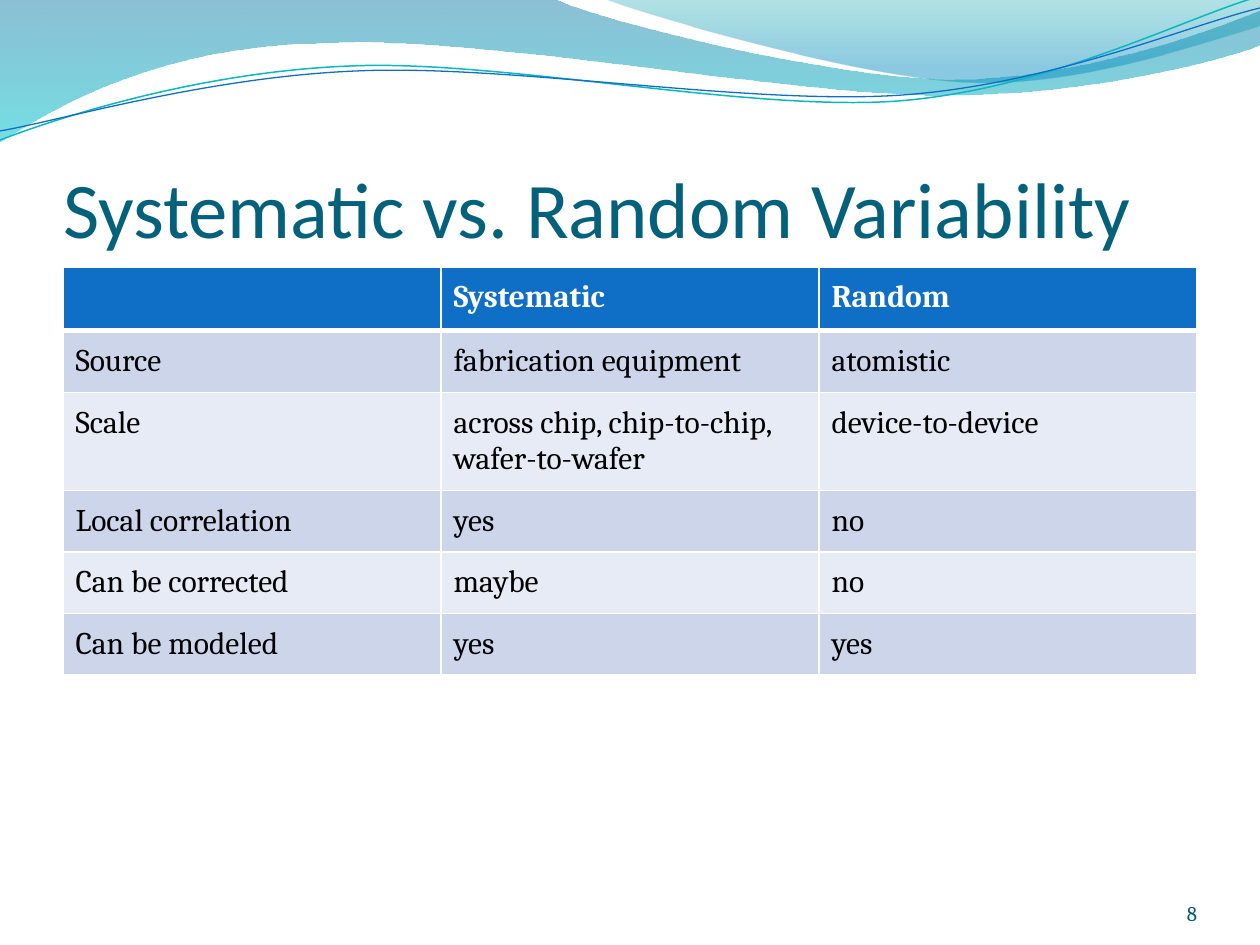
"""Build the slide comparing systematic and random variability."""
import pptx
import pptx.util
import pptx.dml.color
import pptx.enum.text
import pptx.oxml
import pptx.oxml.ns

RGB = pptx.dml.color.RGBColor
WHITE = RGB(0xFF, 0xFF, 0xFF)
BLACK = RGB(0, 0, 0)
BLUE = RGB(0x0F, 0x6F, 0xC6)
TEAL = RGB(0x0A, 0xB8, 0xBF)
NAVY = RGB(0x04, 0x61, 0x7B)
SLATE = RGB(0x04, 0x5D, 0x75)
BANDS = [RGB(0xE7, 0xEB, 0xF5), RGB(0xCC, 0xD5, 0xEA)]
PX = 9144000 / 1260
HEAD, BODY = "Calibri", "Cambria"
SPACE = pptx.oxml.ns.nsdecls("a")

TITLE = "Systematic vs. Random Variability"
NUMBER = "8"
ROWS = [
    ("", "Systematic", "Random"),
    ("Source", "fabrication equipment", "atomistic"),
    ("Scale", "across chip, chip-to-chip, wafer-to-wafer", "device-to-device"),
    ("Local correlation", "yes", "no"),
    ("Can be corrected", "maybe", "no"),
    ("Can be modeled", "yes", "yes"),
]
WAVES = [
    ([(0, 0), (554, -1), (600, 21, 837, 79, 955, 79),
      (1074, 79, 1207, 33, 1260, 11), (1261, 45),
      (1239, 55, 1096, 96, 940, 95), (784, 95, 481, 35, 324, 43),
      (163, 45, 58, 105, -1, 142)],
     [(0, RGB(0x00, 0x74, 0xA1), 45), (1, RGB(0x00, 0xC6, 0xCF), 55)]),
    ([(604, -1), (641, 14, 859, 78, 969, 82),
      (1079, 87, 1211, 40, 1260, 26), (1260, 0)],
     [(0, RGB(0x00, 0xA1, 0xA9), 30), (0.8, RGB(0x00, 0x8B, 0xBF), 45)]),
]
LINES = [
    ([(0, 140), (60, 117, 199, 72, 349, 66), (498, 59, 747, 112, 898, 101),
      (1049, 89, 1182, 19, 1257, -3)], TEAL, 0.85),
    ([(0, 131), (59, 121, 207, 77, 357, 71), (508, 64, 752, 106, 903, 95),
      (1053, 84, 1186, 26, 1260, 8)], BLUE, 0.75),
]


def px(*nums):
    return [pptx.util.Emu(round(num * PX)) for num in nums]


def add_path(slide, path, close):
    """Draw corners as lines and six-number parts as cubic curves."""
    parts = [px(*part) for part in path]
    maker = slide.shapes.build_freeform(*parts[0])
    maker.add_line_segments([part[-2:] for part in parts[1:]], close=close)
    shape = maker.convert_to_shape()
    shape.shadow.inherit = False
    nodes = list(next(shape.element.spPr.iter(pptx.oxml.ns.qn("a:path"))))
    for node, part in zip(nodes[1:], parts[1:]):
        if len(part) == 6:
            node.tag = pptx.oxml.ns.qn("a:cubicBezTo")
            for spot in (0, 1):
                x, y = part[2 * spot:2 * spot + 2]
                node.insert(spot, pptx.oxml.parse_xml(
                    f'<a:pt {SPACE} x="{x - shape.left}" y="{y - shape.top}"/>'))
    return shape


def add_wave(slide, path, stops):
    shape = add_path(slide, path, True)
    shape.line.fill.background()
    shape.fill.gradient()
    shape.fill.gradient_angle = 270
    for stop, (place, color, alpha) in zip(shape.fill.gradient_stops, stops):
        stop.position = place
        stop.color.rgb = color
    tags = shape.element.spPr.iter(pptx.oxml.ns.qn("a:srgbClr"))
    for tag, (_, _, alpha) in zip(tags, stops):
        tag.append(pptx.oxml.parse_xml(f'<a:alpha {SPACE} val="{alpha * 1000}"/>'))


def add_line(slide, path, color, width):
    shape = add_path(slide, path, False)
    shape.fill.background()
    shape.line.color.rgb = color
    shape.line.width = pptx.util.Pt(width)


def write(frame, text, font, size, color, bold=False, align="LEFT"):
    para = frame.paragraphs[0]
    para.alignment = getattr(pptx.enum.text.PP_ALIGN, align)
    run = para.add_run()
    run.text = text
    run.font.name = font
    run.font.size = pptx.util.Pt(size)
    run.font.bold = bold
    run.font.color.rgb = color


def set_box(shape, box, top=0):
    shape.left, shape.top, shape.width, shape.height = px(*box)
    frame = shape.text_frame
    frame.word_wrap = True
    frame.auto_size = pptx.enum.text.MSO_AUTO_SIZE.NONE
    frame.vertical_anchor = pptx.enum.text.MSO_ANCHOR.BOTTOM
    frame.margin_left = frame.margin_right = frame.margin_bottom = 0
    frame.margin_top = px(top)[0]
    return frame


def add_edges(cell, row):
    for spot, side in enumerate("LRTB"):
        width = pptx.util.Pt(3 if row == 0 and side == "B" else 1)
        cell._tc.get_or_add_tcPr().insert(spot, pptx.oxml.parse_xml(
            f'<a:ln{side} {SPACE} w="{width}"><a:solidFill>'
            f'<a:srgbClr val="{WHITE}"/></a:solidFill></a:ln{side}>'))


def add_grid(slide):
    size = len(ROWS), len(ROWS[0])
    table = slide.shapes.add_table(*size, *px(63, 267, 1134, 52 * size[0])).table
    table.horz_banding = False
    for r, row in enumerate(ROWS):
        for c, text in enumerate(row):
            cell = table.cell(r, c)
            cell.margin_left = cell.margin_right = pptx.util.Inches(0.1)
            cell.margin_top = cell.margin_bottom = pptx.util.Inches(0.1)
            cell.fill.solid()
            cell.fill.fore_color.rgb = BANDS[r % 2] if r else BLUE
            add_edges(cell, r)
            if text:
                write(cell.text_frame, text, BODY, 18, BLACK if r else WHITE, r == 0)


def main():
    deck = pptx.Presentation()
    deck.slide_width, deck.slide_height = px(1260, 945)
    slide = deck.slides.add_slide(deck.slide_layouts[5])
    for wave in WAVES:
        add_wave(slide, *wave)
    for line in LINES:
        add_line(slide, *line)
    title = slide.shapes.title
    slide.shapes.element.append(title.element)
    write(set_box(title, (63, 97, 1134, 157), 6), TITLE, HEAD, 45, NAVY)
    add_grid(slide)
    box = (1092, 876, 105, 50)
    label = slide.shapes.add_textbox(*px(*box))
    write(set_box(label, box), NUMBER, BODY, 12, SLATE, align="RIGHT")
    deck.save("out.pptx")


if __name__ == "__main__":
    main()
